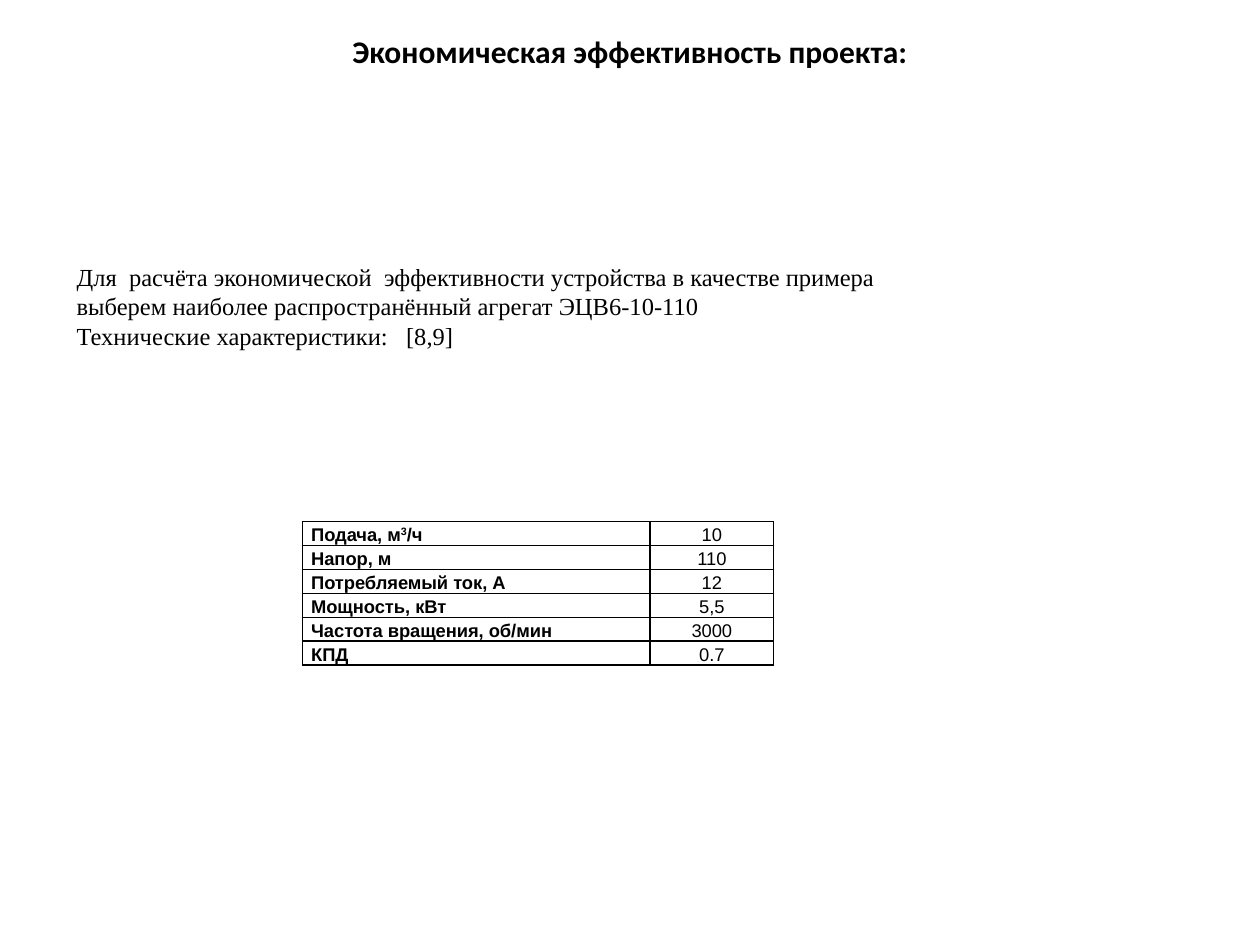
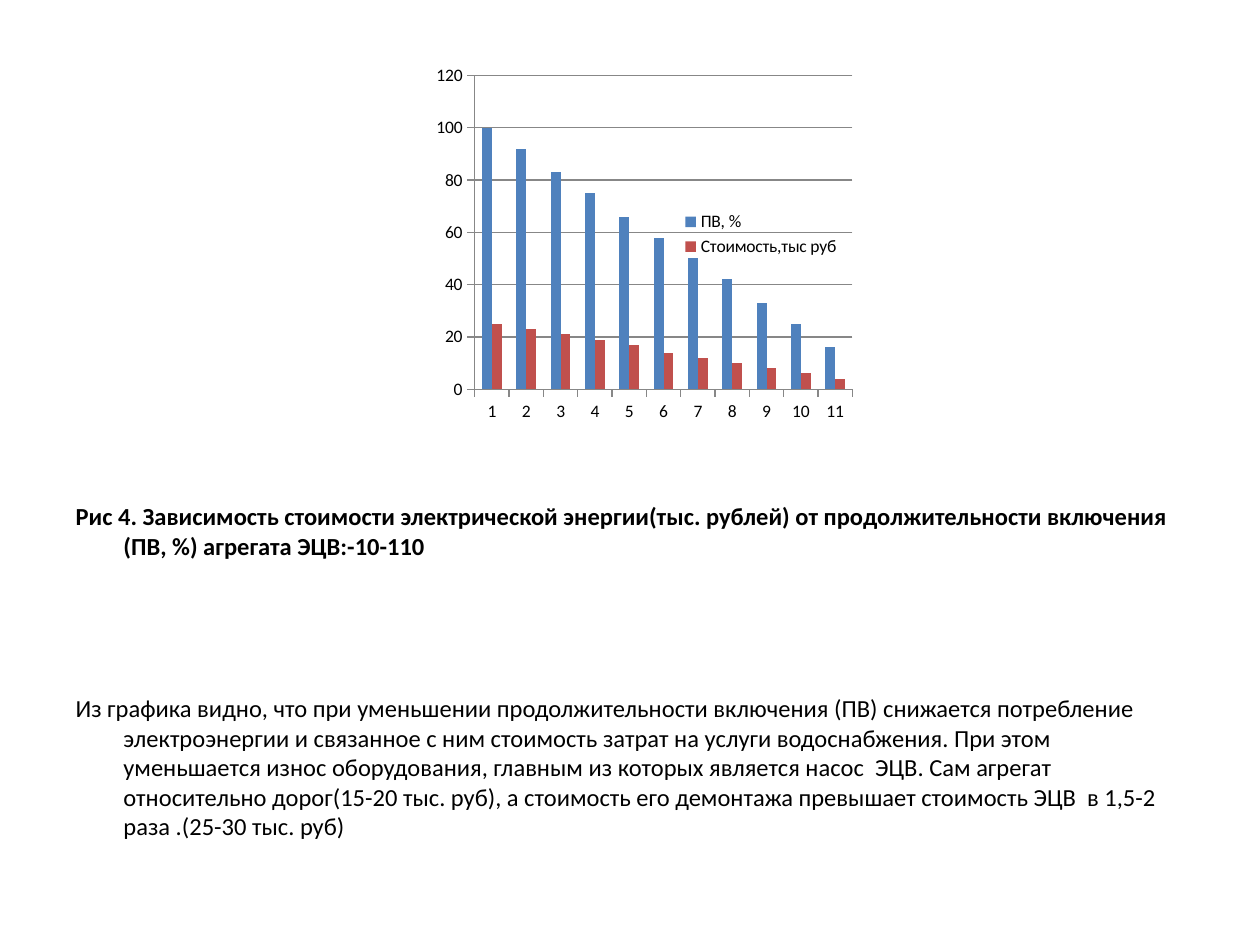
from lxml.etree import SubElement
from pptx import Presentation
from pptx.chart.data import CategoryChartData
from pptx.dml.color import RGBColor
from pptx.enum.chart import XL_CHART_TYPE, XL_LEGEND_POSITION, XL_TICK_MARK
from pptx.enum.text import MSO_ANCHOR, MSO_AUTO_SIZE, PP_ALIGN
from pptx.oxml import parse_xml
from pptx.oxml.ns import nsdecls, qn
from pptx.util import Inches, Pt

SLIDE_WIDTH, SLIDE_HEIGHT = Inches(10), Inches(7.5)
COLUMN, ROW = SLIDE_WIDTH // 100, SLIDE_HEIGHT // 75  # grid of 100 by 75
COLOURS = {"text": "000000", "page": "FFFFFF", "axis": "878787",
           "duty": "4F81BD", "cost": "C0504D"}

TITLE = "Экономическая эффективность проекта:"
INTRO = ["Для  расчёта экономической  эффективности устройства в качестве примера",
         "выберем наиболее распространённый агрегат ЭЦВ6-10-110",
         "Технические характеристики:   [8,9]"]
PUMP_DATA = [("Подача, м³/ч", "10"), ("Напор, м", "110"),
             ("Потребляемый ток, А", "12"), ("Мощность, кВт", "5,5"),
             ("Частота вращения, об/мин", "3000"), ("КПД", "0.7")]
CAPTION = ("Рис 4. Зависимость стоимости электрической энергии(тыс. рублей) "
           "от продолжительности включения (ПВ, %) агрегата ЭЦВ:-10-110")
CONCLUSION = ("Из графика видно, что при уменьшении продолжительности включения (ПВ) "
              "снижается потребление электроэнергии и связанное с ним стоимость затрат "
              "на услуги водоснабжения. При этом уменьшается износ оборудования, главным "
              "из которых является насос  ЭЦВ. Сам агрегат  относительно дорог(15-20 тыс. "
              "руб), а стоимость его демонтажа превышает стоимость ЭЦВ  в 1,5-2 раза "
              ".(25-30 тыс. руб)")
SERIES = [("ПВ, %", "duty", (100, 92, 83, 75, 66, 58, 50, 42, 33, 25, 16)),
          ("Стоимость,тыс руб", "cost", (25, 23, 21, 19, 17, 14, 12, 10, 8, 6, 4))]


def colour(name):
    return RGBColor.from_string(COLOURS[name])


def grid(left, top, width, height):
    return (round(left * COLUMN), round(top * ROW),
            round(width * COLUMN), round(height * ROW))


def place(box, area):
    box.left, box.top, box.width, box.height = grid(*area)


def style_font(font, size, name, bold=False):
    font.size, font.name, font.bold = Pt(size), name, bold
    font.color.rgb = colour("text")


def add_span(para, text, size, name="Calibri", bold=False):
    span = para.add_run()
    span.text = text
    style_font(span.font, size, name, bold)
    return span


def add_page(deck, layout_index):
    page = deck.slides.add_slide(deck.slide_layouts[layout_index])
    page.background.fill.solid()
    page.background.fill.fore_color.rgb = colour("page")
    return page


def set_title(page, text):
    box = page.shapes.title
    place(box, (5, 2.5, 90, 4.6))
    frame = box.text_frame
    frame.auto_size = MSO_AUTO_SIZE.NONE
    frame.vertical_anchor = MSO_ANCHOR.TOP
    frame.margin_top = frame.margin_bottom = 0
    frame.paragraphs[0].alignment = PP_ALIGN.CENTER
    add_span(frame.paragraphs[0], text, 18, bold=True)


def add_lines(page, lines, area):
    frame = page.shapes.add_textbox(*grid(*area)).text_frame
    frame.word_wrap = True
    frame.vertical_anchor = MSO_ANCHOR.MIDDLE
    para = frame.paragraphs[0]
    for index, line in enumerate(lines):
        if index:
            para.add_line_break()
        add_span(para, line, 14, "Times New Roman")


def border_cell(cell):
    properties = cell._tc.get_or_add_tcPr()
    for side in ("lnL", "lnR", "lnT", "lnB"):
        line = SubElement(properties, qn(f"a:{side}"), w=str(Pt(1)))
        fill = SubElement(line, qn("a:solidFill"))
        SubElement(fill, qn("a:srgbClr"), val=COLOURS["text"])


def fill_cell(cell, text, alignment, bold):
    cell.margin_left = cell.margin_right = Inches(0.07)
    cell.margin_top = cell.margin_bottom = 0
    cell.vertical_anchor = MSO_ANCHOR.MIDDLE
    border_cell(cell)
    cell.fill.background()
    para = cell.text_frame.paragraphs[0]
    para.alignment, para.line_spacing = alignment, 1.15
    before, cube, after = text.partition("³")
    add_span(para, before, 10.5, "Arial", bold)
    if cube:
        power = add_span(para, "3", 10.5, "Arial", bold)
        power._r.get_or_add_rPr().set("baseline", "30000")
        add_span(para, after, 10.5, "Arial", bold)


def add_data_table(page, records, left, top, widths, row_height):
    area = grid(left, top, sum(widths), row_height * len(records))
    table = page.shapes.add_table(len(records), len(widths), *area).table
    table.first_row = table.horz_banding = False
    for column, width in zip(table.columns, widths):
        column.width = round(width * COLUMN)
    for row, (label, value) in zip(table.rows, records):
        row.height = round(row_height * ROW)
        fill_cell(row.cells[0], label, PP_ALIGN.JUSTIFY, True)
        fill_cell(row.cells[1], value, PP_ALIGN.CENTER, False)


def set_plot_area(chart, **shares):
    places = "".join(f'<c:{key} val="{share}"/>' for key, share in shares.items())
    layout = parse_xml(
        f'<c:layout {nsdecls("c")}><c:manualLayout><c:layoutTarget val="inner"/>'
        f'<c:xMode val="edge"/><c:yMode val="edge"/>{places}</c:manualLayout></c:layout>')
    plot_area = chart._chartSpace.chart.plotArea
    for old in plot_area.findall(qn("c:layout")):
        plot_area.remove(old)
    plot_area.insert(0, layout)


def add_column_chart(page, area):
    data = CategoryChartData()
    data.categories = [str(number) for number in range(1, 12)]
    for name, _, values in SERIES:
        data.add_series(name, values)
    chart = page.shapes.add_chart(
        XL_CHART_TYPE.COLUMN_CLUSTERED, *grid(*area), data).chart
    style_font(chart.font, 10, "Calibri")
    chart.has_title = False
    chart.has_legend = True
    chart.legend.position = XL_LEGEND_POSITION.RIGHT
    chart.legend.include_in_layout = False
    plot = chart.plots[0]
    plot.gap_width, plot.overlap, plot.vary_by_categories = 150, 0, False
    for series, (_, key, _) in zip(plot.series, SERIES):
        series.format.fill.solid()
        series.format.fill.fore_color.rgb = colour(key)
    chart.value_axis.has_major_gridlines = True
    chart.value_axis.minimum_scale, chart.value_axis.maximum_scale = 0, 120
    chart.value_axis.major_unit = 20
    for axis in (chart.category_axis, chart.value_axis):
        axis.major_tick_mark = XL_TICK_MARK.OUTSIDE
    for part in (chart.category_axis, chart.value_axis, chart.value_axis.major_gridlines):
        part.format.line.color.rgb = colour("axis")
        part.format.line.width = Pt(0.75)
    set_plot_area(chart, x=0.4, y=0.08, w=0.6, h=0.83)


def add_hanging(para, text, space, bold):
    properties = para._p.get_or_add_pPr()
    properties.set("marL", str(Inches(0.38)))
    properties.set("indent", str(-Inches(0.38)))
    para.space_before = Pt(space)
    SubElement(properties, qn("a:buNone"))
    add_span(para, text, 14, bold=bold)


def set_body(page, area):
    box = page.placeholders[1]
    place(box, area)
    frame = box.text_frame
    frame.auto_size = MSO_AUTO_SIZE.NONE
    frame.margin_top = Inches(2.23)  # room for the chart
    add_hanging(frame.paragraphs[0], CAPTION, 0, True)
    add_hanging(frame.add_paragraph(), CONCLUSION, 76, False)


def main():
    deck = Presentation()
    deck.slide_width, deck.slide_height = SLIDE_WIDTH, SLIDE_HEIGHT

    # Pump characteristics
    page = add_page(deck, 5)
    set_title(page, TITLE)
    add_data_table(page, PUMP_DATA, 24, 41.4, (27.6, 9.8), 1.9)
    add_lines(page, INTRO, (5.1, 20.3, 90, 8))

    # Cost against duty cycle
    page = add_page(deck, 1)
    title = page.shapes.title._element
    title.getparent().remove(title)
    set_body(page, (5, 17.5, 90, 49.5))
    add_column_chart(page, (17.7, 3.6, 50, 30))

    deck.save("out.pptx")


if __name__ == "__main__":
    main()
